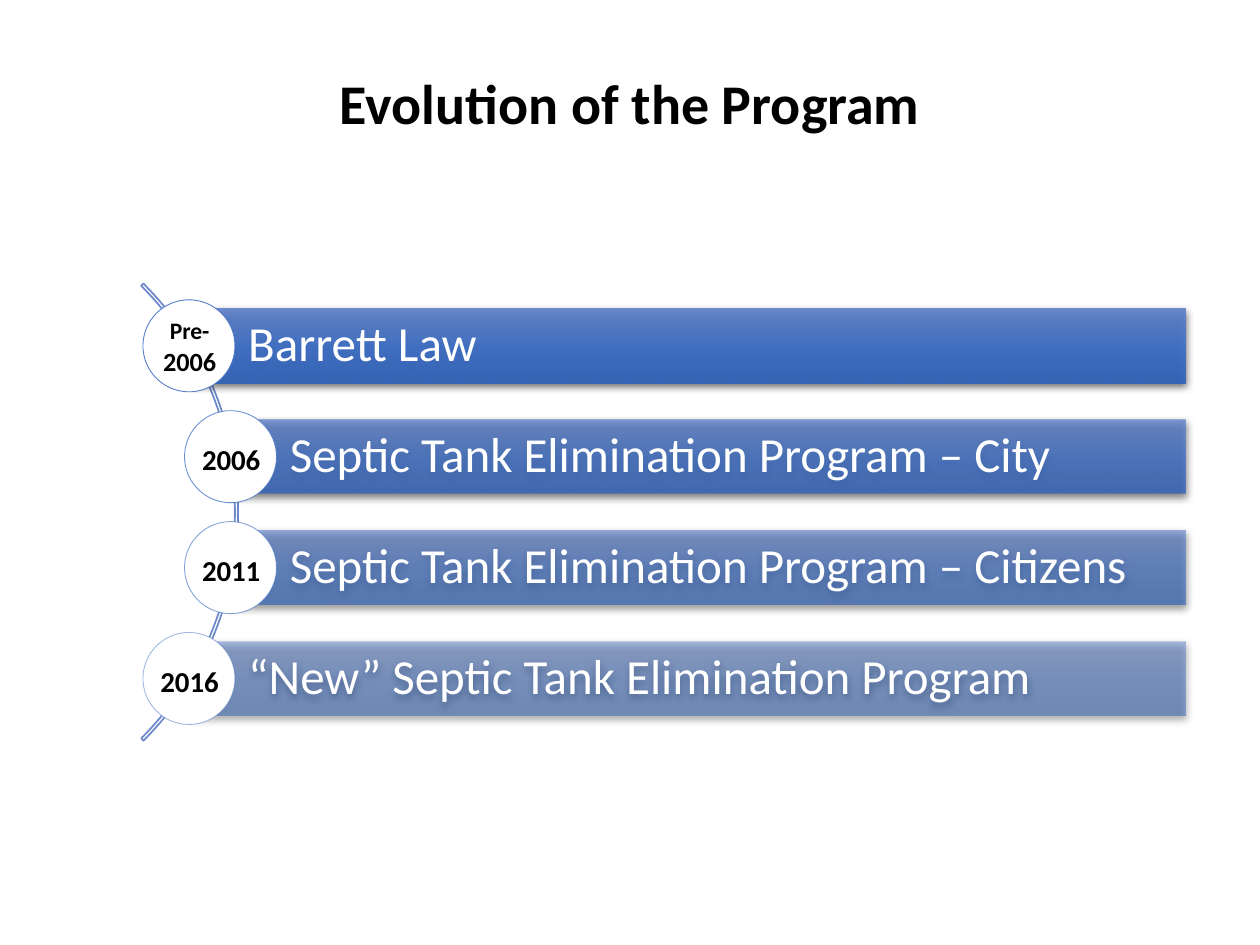
from lxml import etree
from pptx import Presentation
from pptx import util as u
from pptx.dml.color import RGBColor
from pptx.enum import shapes, text
from pptx.oxml.ns import qn

COLORS = {"black": "000000", "white": "FFFFFF", "arc": "6D89CB", "ring": "4472C4",
          "top": "6183CB", "middle": "3E70CA", "bottom": "3062BB"}
COLS, ROWS = 100, 75
PITCH, BAR_H, CIRCLE = 8.8, 5.9, 7.3
FIRST_MID, BAR_RIGHT = 27.45, 94.1

# bar left, opacity, year runs (text, size), programme
STEPS = [
    (15, 90, [("Pre-", 13.5), (" 2006", 15)], "Barrett Law"),
    (18.3, 77, [("2006", 16.5)], "Septic Tank Elimination Program – City"),
    (18.3, 63, [("2011", 16.5)], "Septic Tank Elimination Program – Citizens"),
    (15, 50, [("2016", 16.5)], "“New” Septic Tank Elimination Program"),
]


def add_xml(parent, tag, **attrs):
    return etree.SubElement(parent, qn(tag), {k: str(v) for k, v in attrs.items()})


def add_color(parent, name, opacity):
    clr = add_xml(parent, "a:srgbClr", val=COLORS[name])
    add_xml(clr, "a:alpha", val=opacity * 1000)


class Deck:
    """Holds the style and the current slide; lengths are grid columns and rows."""
    font = "Calibri"

    def __init__(self):
        self.prs = Presentation()
        self.prs.slide_width, self.prs.slide_height = u.Inches(10), u.Inches(7.5)
        self.s = self.prs.slides.add_slide(self.prs.slide_layouts[6])

    def box(self, x, y, w, h):
        dx, dy = self.prs.slide_width / COLS, self.prs.slide_height / ROWS
        return [round(v) for v in (x * dx, y * dy, w * dx, h * dy)]

    def set_text(self, sp, runs, color, bold=False, align=text.PP_ALIGN.CENTER, spacing=None):
        tf = sp.text_frame
        tf.word_wrap = True
        p = tf.paragraphs[0]
        p.alignment, p.line_spacing = align, spacing
        for words, size in runs:
            r = p.add_run()
            r.text = words
            r.font.name, r.font.size, r.font.bold = self.font, u.Pt(size), bold
            r.font.color.rgb = RGBColor.from_string(COLORS[color])
        return tf

    def label(self, x, y, w, h, runs, **style):
        sp = self.s.shapes.add_textbox(*self.box(x, y, w, h))
        return self.set_text(sp, runs, "black", bold=True, **style)

    def shape(self, kind, x, y, w, h, fill=None, line=None, width=1, opacity=100):
        sp = self.s.shapes.add_shape(kind, *self.box(x, y, w, h))
        sp.shadow.inherit = False
        if fill:
            sp.fill.solid()
            sp.fill.fore_color.rgb = RGBColor.from_string(COLORS[fill])
        else:
            sp.fill.background()
        if line:
            sp.line.color.rgb = RGBColor.from_string(COLORS[line])
            sp.line.width = u.Pt(width)
            clr = sp._element.spPr.find(qn("a:ln")).find(".//" + qn("a:srgbClr"))
            add_xml(clr, "a:alpha", val=opacity * 1000)
        else:
            sp.line.fill.background()
        return sp

    def arc(self, x, y, size, thickness):
        """Right-hand quarter of a thin ring."""
        sp = self.shape(shapes.MSO_SHAPE.BLOCK_ARC, x, y, size, size, line="arc")
        for i, value in enumerate((189, 27, thickness / size)):
            sp.adjustments[i] = value

    def bar(self, x, y, w, h, opacity, words):
        sp = self.shape(shapes.MSO_SHAPE.RECTANGLE, x, y, w, h)
        sp.fill.gradient()
        sp.fill.gradient_angle = 270
        sp_pr = sp._element.spPr
        stops = sp_pr.find(".//" + qn("a:gsLst"))
        for stop in list(stops):
            stops.remove(stop)
        for pos, name in ((0, "top"), (50, "middle"), (100, "bottom")):
            add_color(add_xml(stops, "a:gs", pos=pos * 1000), name, opacity)
        shadow = add_xml(sp_pr.find(qn("a:effectLst")), "a:outerShdw", blurRad=u.Pt(4.5),
                         dist=u.Pt(1.5), dir=90 * 60000, rotWithShape=0)
        add_color(shadow, "black", 63)
        tf = self.set_text(sp, [(words, 28)], "white", align=text.PP_ALIGN.LEFT, spacing=0.9)
        tf.vertical_anchor = text.MSO_ANCHOR.MIDDLE
        tf.margin_left = u.Inches(0.47)
        tf.margin_right = tf.margin_top = tf.margin_bottom = u.Inches(0.08)

    def circle(self, x, y, size, opacity):
        self.shape(shapes.MSO_SHAPE.OVAL, x, y, size, size, "white", "ring", 0.5, opacity)


def main():
    deck = Deck()
    title = deck.label(6.9, 4, 86.2, 8.8, [("Evolution of the Program", 32)], spacing=0.9)
    title.vertical_anchor = text.MSO_ANCHOR.MIDDLE
    deck.arc(-32.4, 15, 51.3, 0.25)

    for i, (left, opacity, year, programme) in enumerate(STEPS):
        mid = FIRST_MID + i * PITCH
        deck.bar(left, mid - BAR_H / 2, BAR_RIGHT - left, BAR_H, opacity, programme)
        deck.circle(left - CIRCLE / 2, mid - CIRCLE / 2, CIRCLE, opacity)
        if len(year) > 1:
            w, h, drop = 6.3, 6.1, 0
        else:
            w, h, drop = 6.8, 3.8, 0.2
        tf = deck.label(left + 0.05 - w / 2, mid + drop - h / 2, w, h, year)
        tf.auto_size = text.MSO_AUTO_SIZE.SHAPE_TO_FIT_TEXT

    deck.prs.save("out.pptx")


if __name__ == "__main__":
    main()
